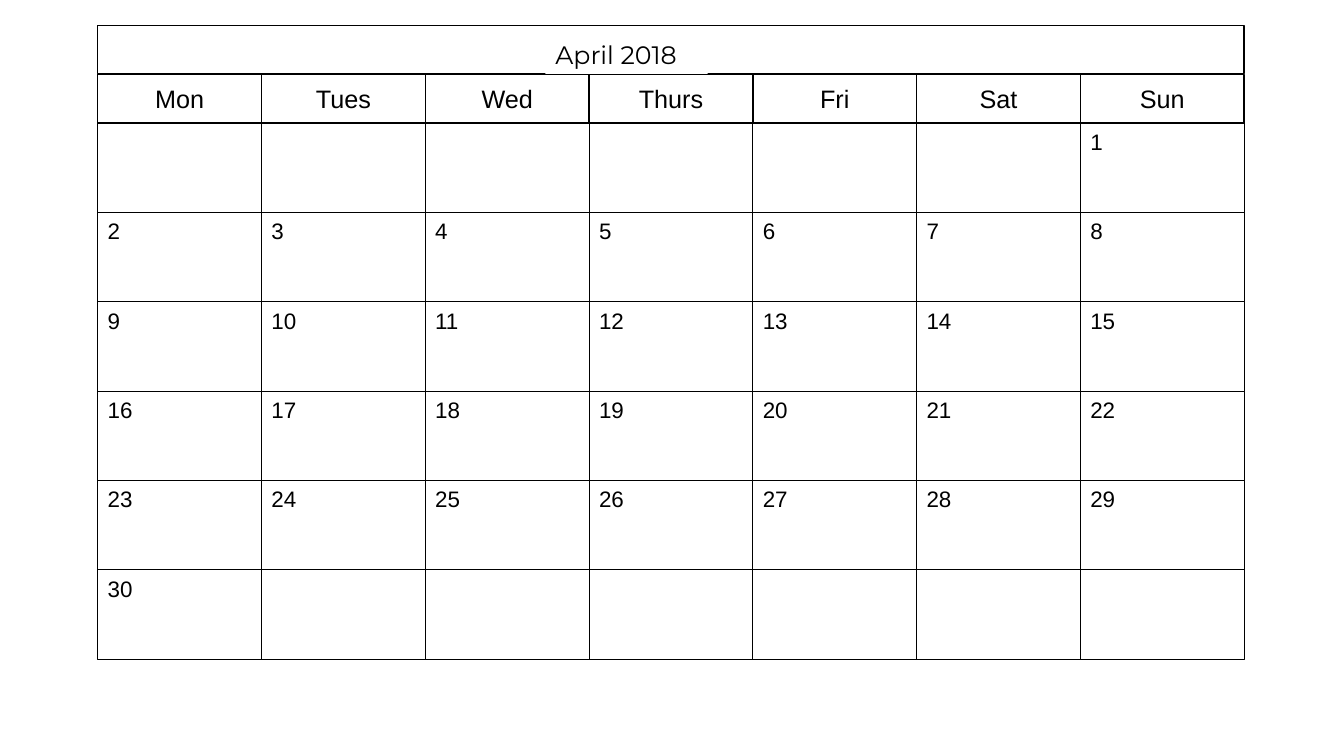
from pptx import Presentation
from pptx.dml.color import RGBColor as Rgb
from pptx.enum.shapes import MSO_SHAPE as Kind
from pptx.enum.text import MSO_ANCHOR as Anchor, MSO_AUTO_SIZE as Fit, PP_ALIGN as Align
from pptx.util import Emu, Pt

PX = 9144
HUES = {"ink": "000000", "paper": "FFFFFF"}
DAYS = ["Mon", "Tues", "Wed", "Thurs", "Fri", "Sat", "Sun"]
WEEKS, SKIP, LAST = 6, 6, 30
HEAD = {"font": {"name": "Arial", "size": Pt(18)}, "align": Align.CENTER,
        "frame": {"vertical_anchor": Anchor.MIDDLE, "word_wrap": True,
                  "margin_top": Emu(2 * PX), "margin_bottom": Emu(2 * PX)}}
DATE = {"font": {"name": "Arial", "size": Pt(16)}, "align": Align.LEFT,
        "frame": {"vertical_anchor": Anchor.TOP, "word_wrap": True}}
TITLE = {"font": {"name": "Montserrat", "size": Pt(18)}, "align": Align.LEFT,
         "frame": {"vertical_anchor": Anchor.TOP, "word_wrap": False,
                   "auto_size": Fit.SHAPE_TO_FIT_TEXT}}


def put(item, vals):
    """Set every attribute named in a dict."""
    for key, val in vals.items():
        setattr(item, key, val)


def add_box(slide, box, line, text="", look=DATE):
    """Add a white rectangle with an outline in points and optional text."""
    rect = slide.shapes.add_shape(Kind.RECTANGLE, *(Emu(round(n * PX)) for n in box))
    rect.shadow.inherit = False
    rect.fill.solid()
    rect.fill.fore_color.rgb = Rgb.from_string(HUES["paper"])
    if line:
        rect.line.color.rgb = Rgb.from_string(HUES["ink"])
        rect.line.width = Pt(line)
    else:
        rect.line.fill.background()
    if text:
        put(rect.text_frame, look["frame"])
        para = rect.text_frame.paragraphs[0]
        para.alignment = look["align"]
        run = para.add_run()
        run.text = text
        put(run.font, look["font"])
        run.font.color.rgb = Rgb.from_string(HUES["ink"])


def add_title(slide, box, text):
    """Draw the month banner with its name."""
    left, top, wide, high = box
    add_box(slide, box, 1)
    add_box(slide, (left + 444, top + 9, 161, 40), 0, text, TITLE)


def add_dates(slide, box):
    """Draw the grid of numbered days."""
    left, top, wide, high = box
    cell, row = wide / len(DAYS), high / WEEKS
    for slot in range(WEEKS * len(DAYS)):
        week, col = divmod(slot, len(DAYS))
        day = slot - SKIP + 1
        text = str(day) if 1 <= day <= LAST else ""
        add_box(slide, (left + col * cell, top + week * row, cell, row), 0.75, text)


def add_heads(slide, box):
    """Draw the row of weekday names."""
    left, top, wide, high = box
    cell = wide / len(DAYS)
    for col, name in enumerate(DAYS):
        add_box(slide, (left + col * cell, top, cell, high), 1, name, HEAD)


def add_month(slide, box, text):
    """Stack the banner, the weekday row and the date grid in a box."""
    left, top, wide, high = box
    bar = 48
    add_title(slide, (left, top, wide, bar), text)
    add_dates(slide, (left, top + 2 * bar + 1, wide, high - 2 * bar - 1))
    add_heads(slide, (left, top + bar + 1, wide, bar))


def main():
    """Build the calendar slide and save it."""
    deck = Presentation()
    put(deck, {"slide_width": Emu(1333 * PX), "slide_height": Emu(750 * PX)})
    slide = deck.slides.add_slide(deck.slide_layouts[6])
    add_month(slide, (97, 25, 1137, 629), "April 2018")
    deck.save("out.pptx")


if __name__ == "__main__":
    main()
